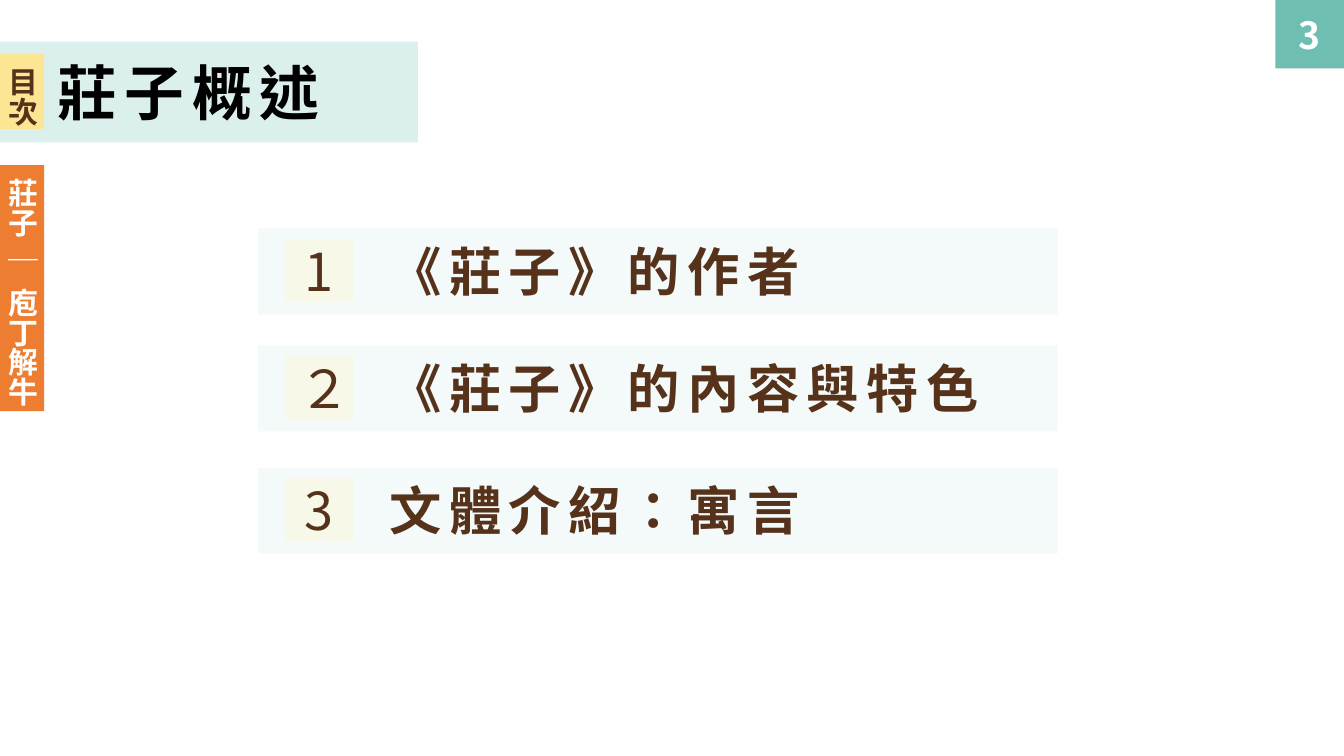
import pptx
import pptx.util
import pptx.dml.color
import pptx.enum.lang
import pptx.enum.shapes
import pptx.enum.text
import pptx.oxml
import pptx.oxml.ns

Inches = pptx.util.Inches
ALIGN = pptx.enum.text.PP_ALIGN

# Content: each text is a list of (words, letter spacing in points)
TITLE = [("莊子概述", 4)]
CONTENTS_TAB = [("目次", 0)]
CHAPTER_TAB = [("莊子 ｜", 0), (" ", 3.6), ("庖丁解牛", 0)]
PAGE_NUMBER = [("3", 0)]
TOPICS = [  # number, topic, top of row
    ("1", "《莊子》的作者", 1.7),
    ("２", "《莊子》的內容與特色", 2.57),
    ("3", "文體介紹：寓言", 3.48),
]

THEME = {
    "font": "Noto Sans CJK SC",
    "black": "000000", "white": "FFFFFF", "brown": "56321B",
    "title_band": "DBEFEC", "yellow": "FCE694", "orange": "ED7D31",
    "teal": "6EBEB1", "row": "F4FAF9", "badge": "F7F8E8",
    "title_size": 32, "topic_size": 28, "page_size": 20, "tab_size": 16,
}


def rgb(name):
    return pptx.dml.color.RGBColor.from_string(THEME[name])


def add_block(s, left, top, width, height, fill):
    sp = s.shapes.add_shape(pptx.enum.shapes.MSO_SHAPE.RECTANGLE,
                            Inches(left), Inches(top), Inches(width), Inches(height))
    sp.fill.solid()
    sp.fill.fore_color.rgb = rgb(fill)
    sp.line.fill.background()
    sp.shadow.inherit = False
    return sp


def add_label(s, left, top, width, height):
    return s.shapes.add_textbox(Inches(left), Inches(top), Inches(width), Inches(height))


def write(sp, parts, size, color, bold=True, align=ALIGN.LEFT, vertical=False):
    tf = sp.text_frame
    tf.word_wrap = not vertical
    tf.auto_size = pptx.enum.text.MSO_AUTO_SIZE.NONE
    tf.vertical_anchor = pptx.enum.text.MSO_ANCHOR.MIDDLE
    if vertical:
        tf._txBody.bodyPr.set("vert", "eaVert")
    p = tf.paragraphs[0]
    p.alignment = align
    for words, spacing in parts:
        r = p.add_run()
        r.text = words
        r.font.name = THEME["font"]
        r.font.size = pptx.util.Pt(THEME[size])
        r.font.bold = bold
        r.font.color.rgb = rgb(color)
        r.font.language_id = pptx.enum.lang.MSO_LANGUAGE_ID.TRADITIONAL_CHINESE
        # East Asian typeface and letter spacing
        rPr = r._r.get_or_add_rPr()
        ea = pptx.oxml.parse_xml(
            f'<a:ea {pptx.oxml.ns.nsdecls("a")} typeface="{THEME["font"]}"/>')
        rPr.find(pptx.oxml.ns.qn("a:latin")).addnext(ea)
        if spacing:
            rPr.set("spc", str(int(spacing * 100)))


# A 16:9 slide
prs = pptx.Presentation()
prs.slide_width = Inches(10)
prs.slide_height = Inches(10 * 9 / 16)
s = prs.slides.add_slide(prs.slide_layouts[5])

# Title on its band
add_block(s, 0, 0.31, 3.11, 0.75, "title_band")
title = s.shapes.title
title.left, title.top = Inches(0.33), Inches(0.36)
title.width, title.height = Inches(4.21), Inches(0.64)
write(title, TITLE, "title_size", "black", align=ALIGN.JUSTIFY)
s.shapes._spTree.append(title._element)  # bring in front of the band

# Side tabs
for text, top, height, fill, color in [
    (CONTENTS_TAB, 0.4, 0.56, "yellow", "brown"),
    (CHAPTER_TAB, 1.23, 1.83, "orange", "white"),
]:
    tab = add_block(s, 0, top, 0.33, height, fill)
    write(tab, text, "tab_size", color, vertical=True)

# Topic rows
for number, topic, top in TOPICS:
    add_block(s, 1.92, top, 5.95, 0.64, "row")
    write(add_label(s, 2.8, top + 0.03, 5.19, 0.57), [(topic, 4)],
          "topic_size", "brown")
    add_block(s, 2.12, top + 0.08, 0.51, 0.47, "badge")
    write(add_label(s, 2.12, top + 0.16, 0.51, 0.31), [(number, 0)],
          "topic_size", "brown", bold=False, align=ALIGN.CENTER)

# Page number
page = add_block(s, 9.49, 0, 0.51, 0.51, "teal")
write(page, PAGE_NUMBER, "page_size", "white", align=ALIGN.CENTER)

prs.save("out.pptx")
